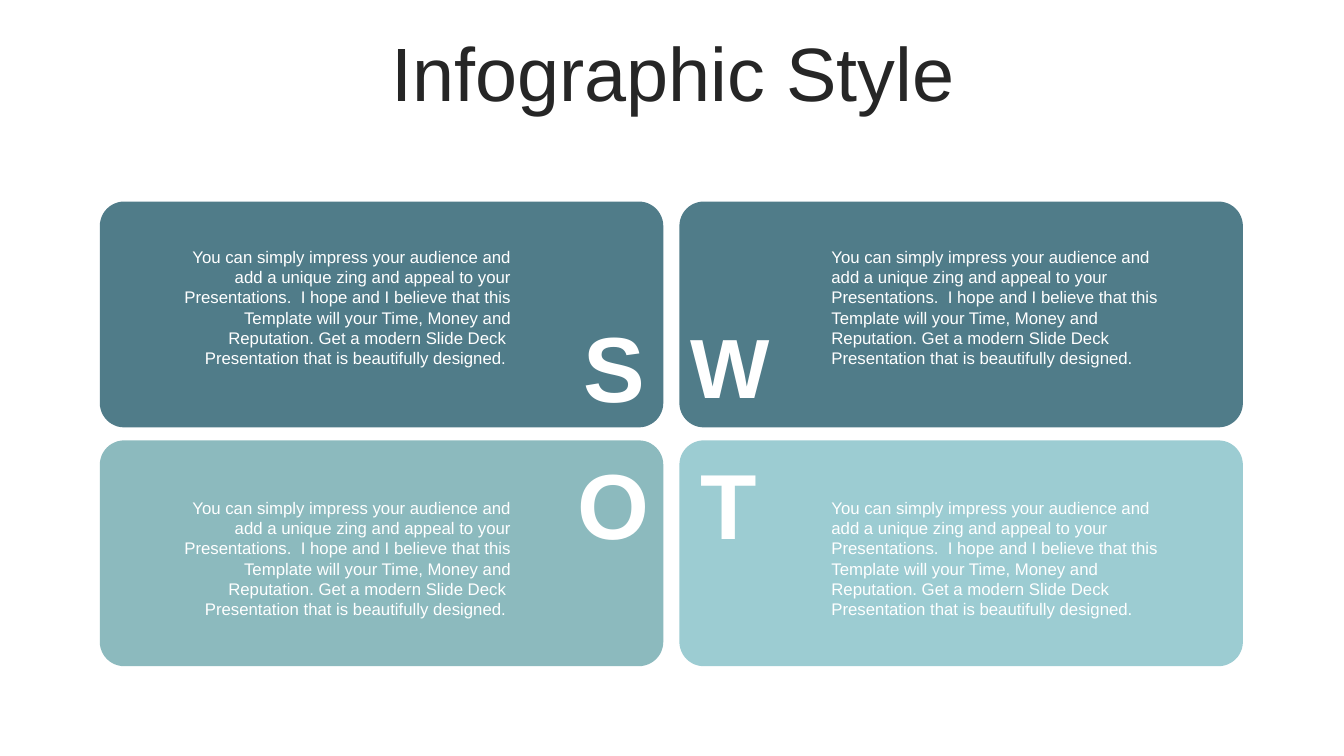
"""Build the SWOT infographic slide."""
import dataclasses

import pptx
import pptx.dml.color
import pptx.enum.shapes
import pptx.enum.text
import pptx.util

Pt = pptx.util.Pt
ALIGN = pptx.enum.text.PP_ALIGN
ANCHOR = pptx.enum.text.MSO_ANCHOR


@dataclasses.dataclass(frozen=True)
class Theme:
    font: str = "Arial"
    ink: str = "262626"
    white: str = "FFFFFF"
    deep: str = "507C89"
    sage: str = "8CBABE"
    aqua: str = "9CCCD2"
    title_size: int = 54
    letter_size: int = 66
    narrow_letter_size: int = 60
    body_size: int = 12


class SlideBuilder:
    def __init__(self, s, theme):
        self.s = s
        self.theme = theme

    def panel(self, x, y, w, h, color):
        kind = pptx.enum.shapes.MSO_SHAPE.ROUNDED_RECTANGLE
        sp = self.s.shapes.add_shape(kind, Pt(x), Pt(y), Pt(w), Pt(h))
        sp.adjustments[0] = 0.108
        sp.shadow.inherit = False
        sp.fill.solid()
        sp.fill.fore_color.rgb = pptx.dml.color.RGBColor.from_string(color)
        sp.line.fill.background()

    def text(self, x, y, w, h, text, size, color, align=ALIGN.CENTER,
             anchor=ANCHOR.MIDDLE, bold=False):
        tf = self.s.shapes.add_textbox(Pt(x), Pt(y), Pt(w), Pt(h)).text_frame
        tf.word_wrap = True
        tf.vertical_anchor = anchor
        tf.text = text
        p = tf.paragraphs[0]
        p.alignment = align
        font = p.runs[0].font
        font.name = self.theme.font
        font.size = Pt(size)
        font.bold = bold
        font.color.rgb = pptx.dml.color.RGBColor.from_string(color)
        return p

    def title(self, text):
        p = self.text(25.2, 26.6, 911.5, 56.9, text,
                      self.theme.title_size, self.theme.ink)
        p.line_spacing = 0.9
        p.space_before = Pt(10)

    def letter(self, x, y, text, size):
        self.text(x, y, 69.1, 87.1, text, size, self.theme.white, bold=True)

    def body(self, x, y, text, align):
        self.text(x, y, 249.1, 94.3, text, self.theme.body_size,
                  self.theme.white, align, ANCHOR.TOP)


BODY = ("You can simply impress your audience and add a unique zing and appeal "
        "to your Presentations.  I hope and I believe that this Template will "
        "your Time, Money and Reputation. Get a modern Slide Deck  "
        "Presentation that is beautifully designed.")


def main():
    prs = pptx.Presentation()
    prs.slide_width, prs.slide_height = Pt(960), Pt(540)
    theme = Theme()
    slide = SlideBuilder(prs.slides.add_slide(prs.slide_layouts[6]), theme)
    slide.title("Infographic Style")

    columns = [(71.3, 123.1, 403.9, ALIGN.RIGHT, BODY + " "),
               (485.3, 586.8, 486, ALIGN.LEFT, BODY)]
    rows = [(144, 172.8, 217.4), (314.6, 352.1, 315.4)]
    quadrants = [
        [("S", theme.deep, theme.letter_size),
         ("W", theme.deep, theme.narrow_letter_size)],
        [("O", theme.sage, theme.letter_size),
         ("T", theme.aqua, theme.letter_size)],
    ]
    for (panel_y, body_y, letter_y), row in zip(rows, quadrants):
        for column, (letter, color, size) in zip(columns, row):
            panel_x, body_x, letter_x, align, body = column
            slide.panel(panel_x, panel_y, 402.5, 161.3, color)
            slide.body(body_x, body_y, body, align)
            slide.letter(letter_x, letter_y, letter, size)

    prs.save("out.pptx")


if __name__ == "__main__":
    main()
